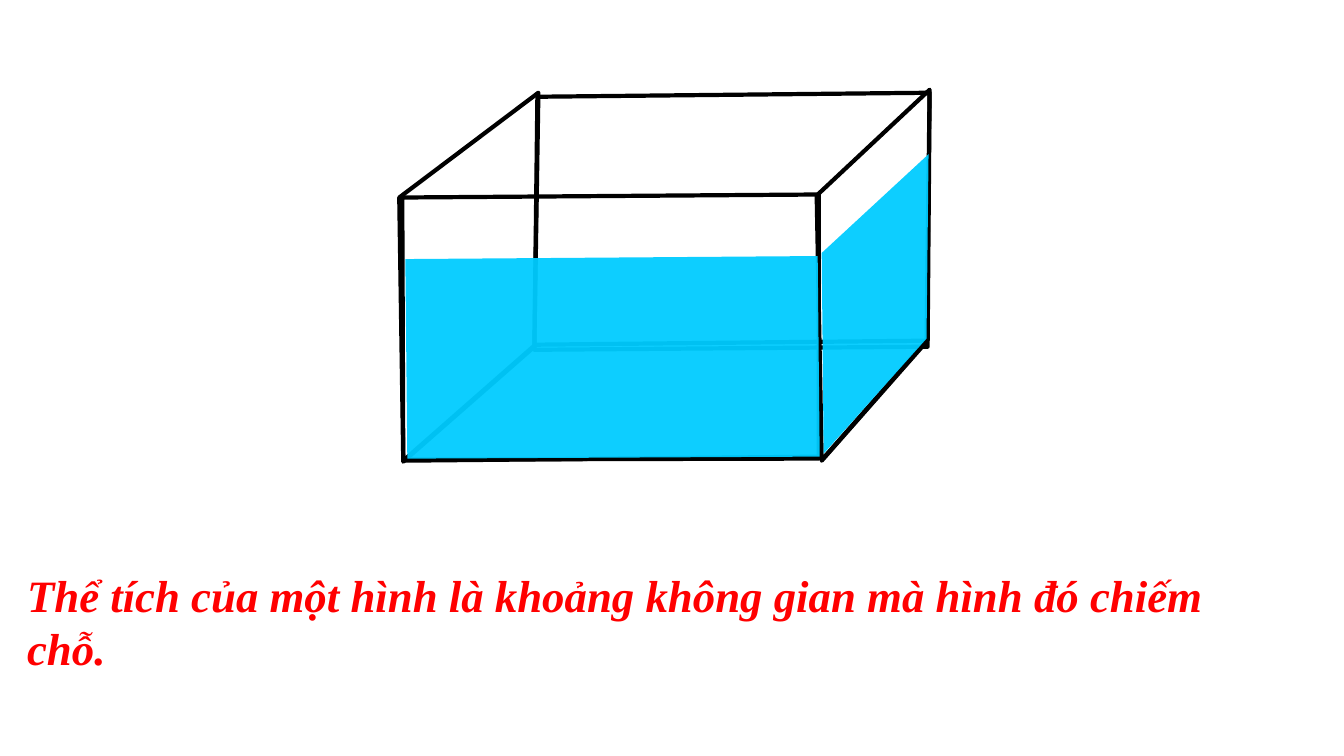
from pptx import Presentation
from pptx.dml.color import RGBColor
from pptx.enum.text import MSO_AUTO_SIZE
from pptx.oxml.ns import qn
from pptx.util import Pt
from lxml.etree import SubElement

PX = 9144
COLORS = {"edge": "000000", "water": "00CCFF", "text": "FF0000"}
FACES = [
    [(396, 196), (534, 92), (530, 344), (400, 458)],
    [(530, 347), (920, 344), (922, 92), (533, 96)],
    [(400, 457), (531, 342), (919, 338), (818, 453)],
    [(400, 456), (812, 455), (812, 193), (399, 196)],
    [(810, 194), (922, 89), (919, 339), (815, 457)],
]
WATER = [
    [(402, 257), (811, 254), (813, 453), (404, 455)],
    [(921, 153), (815, 251), (817, 450), (919, 336)],
]


class Board:
    """Draws styled elements on the current slide."""

    def __init__(self, deck, font):
        self.font = font
        self.slide = deck.slides.add_slide(deck.slide_layouts[6])

    def color(self, name):
        return RGBColor.from_string(COLORS[name])

    def shape(self, points):
        pen = self.slide.shapes.build_freeform(*points[0], scale=PX)
        pen.add_line_segments(points[1:], close=True)
        form = pen.convert_to_shape()
        form.shadow.inherit = False
        return form

    def face(self, points):
        form = self.shape(points)
        form.fill.background()
        form.line.color.rgb = self.color("edge")
        form.line.width = Pt(3)

    def water(self, points, alpha=95):
        form = self.shape(points)
        form.line.fill.background()
        form.fill.solid()
        form.fill.fore_color.rgb = self.color("water")
        tint = form.fill._xPr.find(qn("a:solidFill"))[0]
        SubElement(tint, qn("a:alpha"), val=str(alpha * 1000))

    def text(self, words, left, top, width, height, size):
        box = self.slide.shapes.add_textbox(*(n * PX for n in (left, top, width, height)))
        frame = box.text_frame
        frame.word_wrap = True
        frame.auto_size = MSO_AUTO_SIZE.SHAPE_TO_FIT_TEXT
        run = frame.paragraphs[0].add_run()
        run.text = words
        font = run.font
        font.name, font.size = self.font, Pt(size)
        font.bold = font.italic = True
        font.color.rgb = self.color("text")


def main():
    deck = Presentation()
    deck.slide_width, deck.slide_height = 1333 * PX, 750 * PX
    board = Board(deck, "Times New Roman")
    for points in FACES:
        board.face(points)
    for points in WATER:
        board.water(points)
    board.text("Thể tích của một hình là khoảng không gian mà hình đó chiếm chỗ.",
               17, 558, 1275, 64, 32)
    deck.save("out.pptx")


if __name__ == "__main__":
    main()
